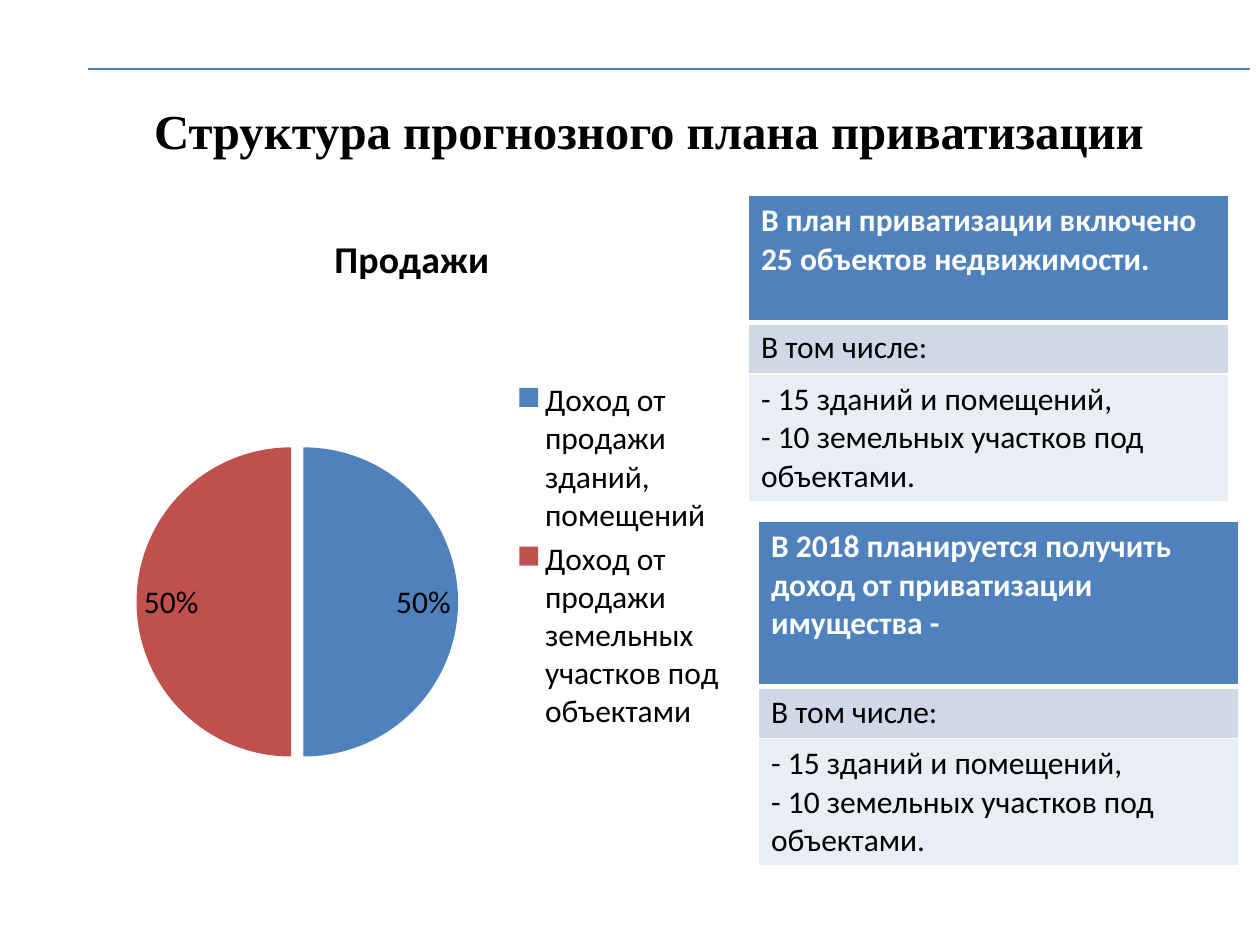
import pptx
import pptx.chart.data
import pptx.dml.color
import pptx.enum.chart
import pptx.enum.shapes
import pptx.enum.text
import pptx.oxml
import pptx.oxml.ns
import pptx.util

BLUE = pptx.dml.color.RGBColor(0x4F, 0x81, 0xBD)
RED = pptx.dml.color.RGBColor(0xC0, 0x50, 0x4D)
BAND = pptx.dml.color.RGBColor(0xD0, 0xD8, 0xE8)
PALE = pptx.dml.color.RGBColor(0xE9, 0xED, 0xF4)
WHITE = pptx.dml.color.RGBColor(0xFF, 0xFF, 0xFF)
BLACK = pptx.dml.color.RGBColor(0, 0, 0)

deck = pptx.Presentation()
deck.slide_width = pptx.util.Inches(10)
deck.slide_height = pptx.util.Inches(7.5)
page = deck.slides.add_slide(deck.slide_layouts[6])
column = deck.slide_width / 100
row = deck.slide_height / 75


def grid(left, top, width, height):
    return int(left * column), int(top * row), int(width * column), int(height * row)


def write(frame, text, size=18, name="Calibri", color=BLACK, bold=False, align=None):
    frame.word_wrap = True
    for index, line in enumerate(text.split("\n")):
        para = frame.paragraphs[0] if index == 0 else frame.add_paragraph()
        para.alignment = align
        span = para.add_run()
        span.text = line
        span.font.size = pptx.util.Pt(size)
        span.font.name = name
        span.font.bold = bold
        span.font.color.rgb = color


rule = page.shapes.add_connector(
    pptx.enum.shapes.MSO_CONNECTOR.STRAIGHT, *grid(7, 5.5, 99.2, 5.5))
rule.line.color.rgb = BLUE
rule.line.width = pptx.util.Pt(1.25)
rule._element.spPr.append(pptx.oxml.parse_xml(
    f"<a:effectLst {pptx.oxml.ns.nsdecls('a')}/>"))

title = page.shapes.add_textbox(*grid(2.8, 7.6, 94.5, 5.5))
title.text_frame.vertical_anchor = pptx.enum.text.MSO_ANCHOR.MIDDLE
title.text_frame.margin_left = int(3.9 * column)
write(title.text_frame, "Структура прогнозного плана приватизации", size=27.9,
      name="Times New Roman", bold=True, align=pptx.enum.text.PP_ALIGN.CENTER)

DETAILS = "- 15 зданий и помещений,\n- 10 земельных участков под объектами."
panels = [
    (59.4, 15.5, 10.1, "В план приватизации включено 25 объектов недвижимости."),
    (60.2, 41.4, 13.1, "В 2018 планируется получить доход от приватизации имущества -"),
]
for left, top, head_height, heading in panels:
    heights = [head_height, 4.1, 10.1]
    table = page.shapes.add_table(3, 1, *grid(left, top, 38.1, sum(heights))).table
    texts = [heading, "В том числе:", DETAILS]
    fills = [BLUE, BAND, PALE]
    for index, (height, text, fill) in enumerate(zip(heights, texts, fills)):
        is_head = index == 0
        table.rows[index].height = int(height * row)
        cell = table.cell(index, 0)
        write(cell.text_frame, text, color=WHITE if is_head else BLACK, bold=is_head)
        for side in "LRTB":
            thick = (is_head and side == "B") or (index == 1 and side == "T")
            width = pptx.util.Pt(3 if thick else 1)
            cell._tc.get_or_add_tcPr().append(pptx.oxml.parse_xml(
                f'<a:ln{side} {pptx.oxml.ns.nsdecls("a")} w="{width}"><a:solidFill>'
                f'<a:srgbClr val="{WHITE}"/></a:solidFill></a:ln{side}>'))
        cell.fill.solid()
        cell.fill.fore_color.rgb = fill

sales = pptx.chart.data.CategoryChartData()
sales.categories = ["Доход от продажи зданий, помещений",
                    "Доход от продажи земельных участков под объектами"]
sales.add_series("Продажи", [50, 50])
chart = page.shapes.add_chart(
    pptx.enum.chart.XL_CHART_TYPE.PIE, *grid(6.7, 16.2, 52, 55.9), sales).chart
chart.font.size = pptx.util.Pt(18)
chart.font.name = "Calibri"
chart.font.color.rgb = BLACK
chart.has_title = True
write(chart.chart_title.text_frame, "Продажи", size=21.6, bold=True)
chart.chart_title.include_in_layout = False
chart.has_legend = True
chart.legend.position = pptx.enum.chart.XL_LEGEND_POSITION.RIGHT
chart.legend.include_in_layout = False

plot = chart.plots[0]
plot.vary_by_categories = True
series = plot.series[0]
for index, color in enumerate([BLUE, RED]):
    fill = series.points[index].format.fill
    fill.solid()
    fill.fore_color.rgb = color
labels = series.data_labels
labels.show_percentage = True
labels.show_value = False
labels.number_format = "0%"
labels.number_format_is_linked = False
labels.position = pptx.enum.chart.XL_LABEL_POSITION.INSIDE_END

chart_names = pptx.oxml.ns.nsdecls("c")
for point in series._element.findall(pptx.oxml.ns.qn("c:dPt")):
    point.find(pptx.oxml.ns.qn("c:spPr")).addprevious(
        pptx.oxml.parse_xml(f'<c:explosion {chart_names} val="4"/>'))
series._element.find(pptx.oxml.ns.qn("c:dPt")).addprevious(
    pptx.oxml.parse_xml(f'<c:explosion {chart_names} val="25"/>'))

area = chart._chartSpace.chart.plotArea
for old in area.findall(pptx.oxml.ns.qn("c:layout")):
    area.remove(old)
area.insert(0, pptx.oxml.parse_xml(
    f'<c:layout {chart_names}><c:manualLayout><c:layoutTarget val="inner"/>'
    '<c:xMode val="edge"/><c:yMode val="edge"/><c:x val="0.03"/><c:y val="0.29"/>'
    '<c:w val="0.59"/><c:h val="0.55"/></c:manualLayout></c:layout>'))

deck.save("out.pptx")
